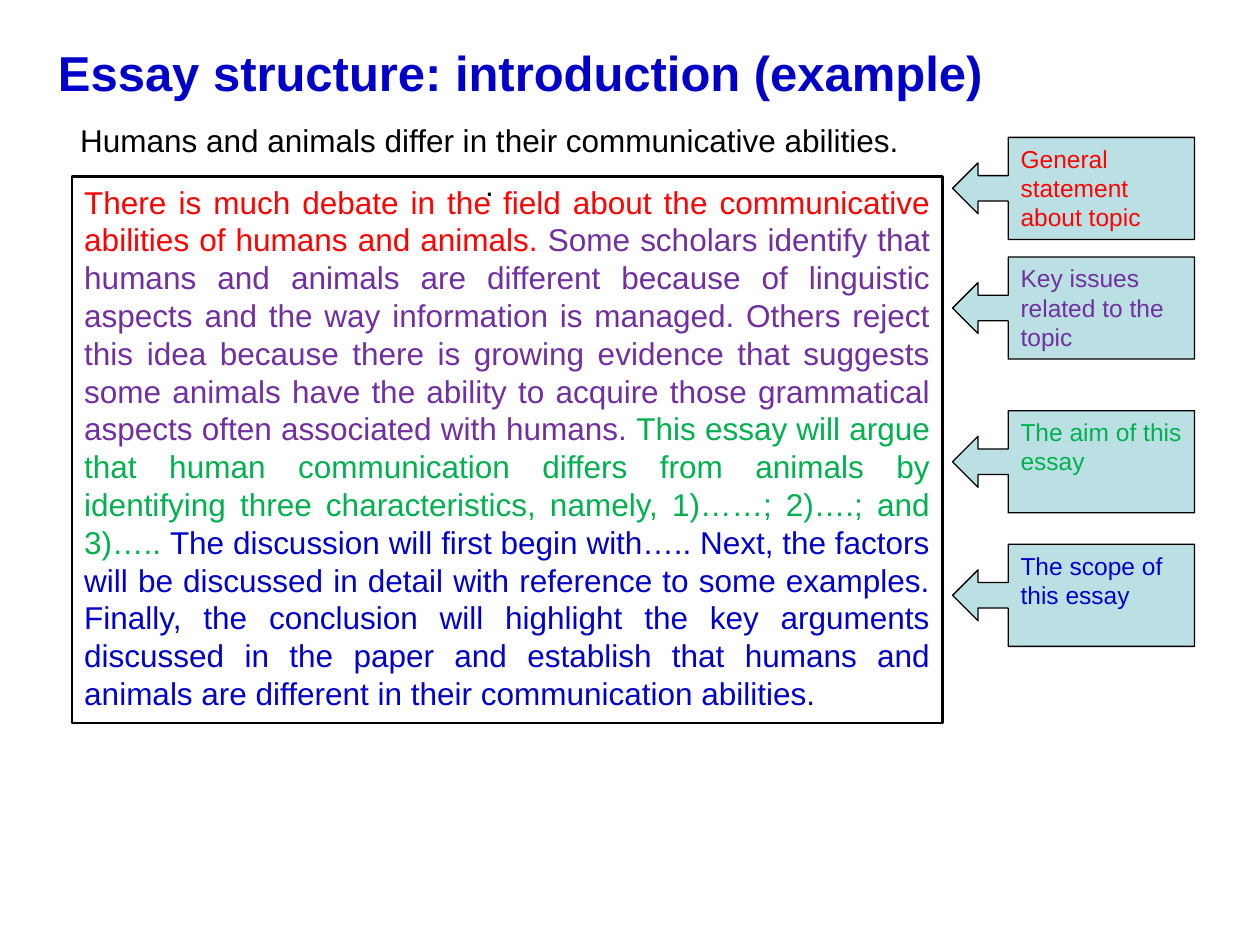
from pptx import Presentation
from pptx.dml.color import RGBColor
from pptx.enum.shapes import MSO_SHAPE
from pptx.enum.text import MSO_ANCHOR, PP_ALIGN
from pptx.util import Inches, Pt

COLOURS = {
    "black": "000000",
    "white": "FFFFFF",
    "callout": "BBE0E3",
    "statement": "FF0000",
    "issues": "7030A0",
    "aim": "00B050",
    "scope": "0000C8",
}
FONT = "Arial"

ESSAY = [
    ("There is much debate in the field about the communicative abilities of "
     "humans and animals. ", "statement"),
    ("Some scholars identify that humans and animals are different because of "
     "linguistic aspects and the way information is managed. Others reject this "
     "idea because there is growing evidence that suggests some animals have the "
     "ability to acquire those grammatical aspects often associated with "
     "humans. ", "issues"),
    ("This essay will argue that human communication differs from animals by "
     "identifying three characteristics, namely, 1)……; 2)….; and 3)….. ", "aim"),
    ("The discussion will first begin with….. Next, the factors will be discussed "
     "in detail with reference to some examples. Finally, the conclusion will "
     "highlight the key arguments discussed in the paper and establish that "
     "humans and animals are different in their communication abilities.", "scope"),
]
CALLOUTS = [
    (1.09, "General statement about topic", "statement"),
    (2.04, "Key issues related to the topic", "issues"),
    (3.26, "The aim of this essay", "aim"),
    (4.32, "The scope of this essay", "scope"),
]


class SlideBuilder:
    """Holds the text style and the slide being filled."""

    def __init__(self, deck):
        self.slide = deck.slides.add_slide(deck.slide_layouts[5])

    def colour(self, name):
        return RGBColor.from_string(COLOURS[name])

    def add_text(self, shape, paragraphs, size, align=PP_ALIGN.LEFT, bold=False, gap=0):
        """Fill a shape with paragraphs, each a list of (text, colour) runs."""
        frame = shape.text_frame
        frame.word_wrap = True
        frame.vertical_anchor = MSO_ANCHOR.TOP
        frame.margin_left = frame.margin_right = Inches(0.1)
        frame.margin_top = frame.margin_bottom = Inches(0.05)
        for index, runs in enumerate(paragraphs):
            para = frame.add_paragraph() if index else frame.paragraphs[0]
            para.alignment = align
            para.space_before = Pt(gap if index else 0)
            for text, colour in runs:
                span = para.add_run()
                span.text = text
                span.font.name = FONT
                span.font.size = Pt(size)
                span.font.bold = bold
                span.font.color.rgb = self.colour(colour)

    def title(self, left, top, width, height, text):
        title = self.slide.shapes.title
        title.left, title.top = Inches(left), Inches(top)
        title.width, title.height = Inches(width), Inches(height)
        self.add_text(title, [[(text, "scope")]], 28, bold=True)

    def box(self, kind, left, top, width, height, fill=None, line_width=0):
        box = self.slide.shapes.add_shape(
            kind, Inches(left), Inches(top), Inches(width), Inches(height))
        box.shadow.inherit = False
        if fill:
            box.fill.solid()
            box.fill.fore_color.rgb = self.colour(fill)
        else:
            box.fill.background()
        if line_width:
            box.line.color.rgb = self.colour("black")
            box.line.width = Pt(line_width)
        else:
            box.line.fill.background()
        return box

    def callout(self, top, text, colour):
        callout = self.box(MSO_SHAPE.LEFT_ARROW_CALLOUT, 7.56, top, 1.92, 0.81,
                           "callout", 0.75)
        for index, value in enumerate((0.25, 0.25, 0.25, 0.77)):
            callout.adjustments[index] = value
        self.add_text(callout, [[(text, colour)]], 14)


def main():
    deck = Presentation()
    deck.slide_width, deck.slide_height = Inches(10), Inches(7.5)
    page = SlideBuilder(deck)

    page.title(0.36, 0.29, 9.11, 0.54, "Essay structure: introduction (example)")

    lead = page.box(MSO_SHAPE.RECTANGLE, 0.39, 0.91, 6.99, 0.36, "white")
    lead_lines = ["Humans and animals differ in their communicative abilities.", "."]
    page.add_text(lead, [[(line, "black")] for line in lead_lines], 18,
                  PP_ALIGN.CENTER, gap=3.6)

    essay = page.box(MSO_SHAPE.RECTANGLE, 0.57, 1.4, 6.91, 4.34, line_width=1.5)
    page.add_text(essay, [ESSAY], 18, PP_ALIGN.JUSTIFY)

    for top, text, colour in CALLOUTS:
        page.callout(top, text, colour)

    deck.save("out.pptx")


if __name__ == "__main__":
    main()
